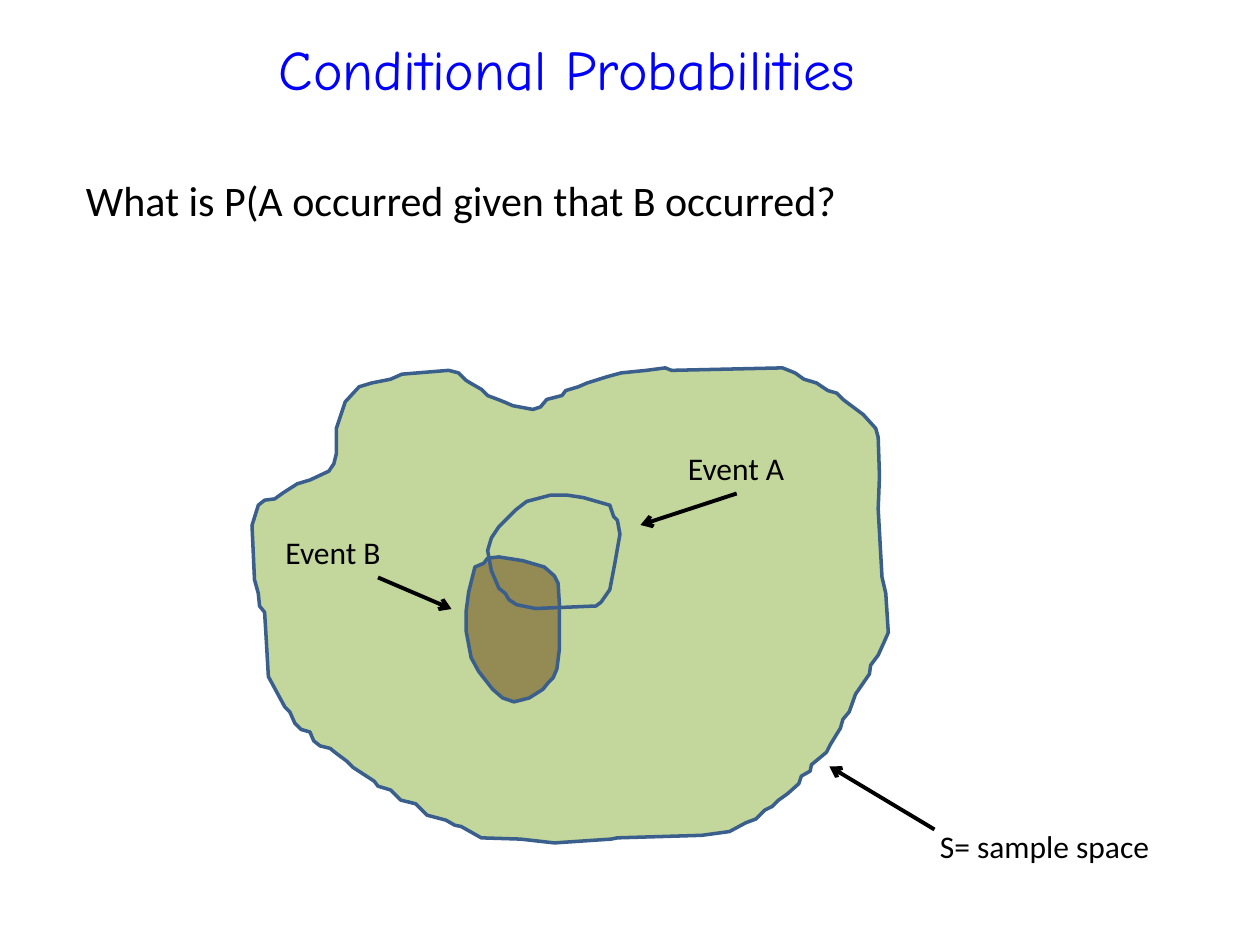
from lxml.etree import SubElement
from pptx import Presentation
from pptx.dml.color import RGBColor
from pptx.enum.shapes import MSO_CONNECTOR
from pptx.enum.text import MSO_ANCHOR, MSO_AUTO_SIZE, PP_ALIGN
from pptx.oxml.ns import qn
from pptx.util import Pt

HUNDREDTH_INCH = Pt(0.72)

SAMPLE_SPACE = [
    (423, 325), (407, 322), (400, 319), (395, 317), (387, 314), (382, 309),
    (375, 305), (370, 302), (364, 296), (356, 294), (319, 297), (310, 301),
    (295, 304), (285, 307), (274, 319), (267, 340), (267, 360), (265, 368),
    (261, 374), (246, 381), (236, 384), (225, 391), (218, 396), (210, 397),
    (205, 401), (200, 417), (202, 460), (205, 471), (206, 481), (210, 486),
    (211, 502), (213, 537), (226, 561), (230, 565), (234, 574), (239, 579),
    (246, 581), (249, 588), (254, 592), (262, 594), (267, 598), (275, 604),
    (280, 609), (297, 620), (300, 624), (310, 627), (318, 635), (330, 638),
    (339, 647), (354, 651), (361, 655), (366, 656), (382, 665), (413, 666),
    (440, 669), (485, 666), (490, 665), (557, 663), (579, 660), (592, 653),
    (600, 650), (607, 643), (613, 640), (618, 635), (625, 630), (634, 622),
    (636, 616), (643, 612), (644, 607), (656, 597), (659, 591), (667, 578),
    (669, 571), (674, 565), (679, 551), (690, 535), (691, 528), (697, 520),
    (702, 509), (705, 502), (703, 471), (700, 458), (697, 404), (698, 378),
    (697, 347), (695, 340), (685, 329), (669, 317), (664, 312), (657, 310),
    (648, 304), (638, 301), (631, 296), (621, 292), (533, 294), (528, 292),
    (513, 294), (493, 296), (482, 299), (466, 304), (459, 307), (449, 310),
    (446, 314), (434, 317), (429, 323),
]
EVENT_B = [
    (377, 450), (372, 470), (370, 485), (370, 501), (374, 522), (380, 533),
    (391, 547), (399, 554), (408, 557), (420, 554), (431, 547), (435, 542),
    (439, 538), (442, 531), (444, 515), (444, 480), (443, 463), (440, 457),
    (432, 450), (415, 445), (396, 442), (387, 443), (384, 447),
]
EVENT_A = [
    (484, 401), (463, 395), (450, 393), (437, 393), (418, 398), (409, 405),
    (396, 418), (390, 427), (387, 437), (390, 453), (396, 467), (401, 471),
    (404, 476), (410, 480), (425, 483), (473, 481), (477, 478), (484, 468),
    (488, 447), (492, 424), (490, 413), (487, 410),
]


def color(hex_value):
    return RGBColor.from_string(hex_value)


class VennSlide:
    body_font = "Calibri"
    title_font = "Comic Neue"
    ink = "000000"
    title_ink = "0000FF"
    outline_ink = "3A5F8C"

    def __init__(self, slide):
        self.slide = slide

    def format_text(self, frame, font_name, size, ink):
        for paragraph in frame.paragraphs:
            for run in paragraph.runs:
                run.font.name = font_name
                run.font.size = Pt(size)
                run.font.color.rgb = color(ink)

    def title(self, wording, left, top, width, height):
        heading = self.slide.shapes.title
        heading.left, heading.top = Pt(left), Pt(top)
        heading.width, heading.height = Pt(width), Pt(height)
        frame = heading.text_frame
        frame.text = wording
        frame.vertical_anchor = MSO_ANCHOR.MIDDLE
        frame.paragraphs[0].alignment = PP_ALIGN.CENTER
        self.format_text(frame, self.title_font, 32, self.title_ink)

    def label(self, wording, left, top, width, height=29, size=18):
        box = self.slide.shapes.add_textbox(Pt(left), Pt(top), Pt(width), Pt(height))
        frame = box.text_frame
        frame.text = wording
        frame.word_wrap = False
        frame.auto_size = MSO_AUTO_SIZE.SHAPE_TO_FIT_TEXT
        self.format_text(frame, self.body_font, size, self.ink)
        return box

    def region(self, outline, fill=None):
        first, *rest = outline
        builder = self.slide.shapes.build_freeform(*first, scale=HUNDREDTH_INCH)
        builder.add_line_segments(rest, close=True)
        area = builder.convert_to_shape()
        area.shadow.inherit = False
        if fill:
            area.fill.solid()
            area.fill.fore_color.rgb = color(fill)
        else:
            area.fill.background()
        area.line.color.rgb = color(self.outline_ink)
        area.line.width = Pt(2)

    def arrow(self, start, end, source=None):
        pointer = self.slide.shapes.add_connector(
            MSO_CONNECTOR.STRAIGHT, *map(Pt, start + end))
        if source is not None:
            pointer.begin_connect(source, 2)
        pointer.line.color.rgb = color(self.ink)
        pointer.line.width = Pt(2.25)
        SubElement(pointer.line._get_or_add_ln(), qn("a:tailEnd"), type="arrow")
        SubElement(pointer._element.spPr, qn("a:effectLst"))


def main():
    deck = Presentation()
    deck.slide_width, deck.slide_height = Pt(720), Pt(540)
    venn = VennSlide(deck.slides.add_slide(deck.slide_layouts[5]))

    venn.title("Conditional Probabilities", 0, -6, 648, 90)
    venn.region(SAMPLE_SPACE, "C3D69B")
    event_a = venn.label("Event A", 386, 253, 70)
    venn.arrow((420, 282), (366, 300), event_a)
    venn.label("S= sample space", 530, 469, 135)
    venn.arrow((534, 474), (474, 438))
    venn.region(EVENT_B, "948A54")
    venn.region(EVENT_A)
    venn.label("Event B", 156, 301, 70)
    venn.arrow((216, 330), (258, 348))
    venn.label("What is P(A occurred given that B occurred?", 42, 96, 447, 36, 24)

    deck.save("out.pptx")


if __name__ == "__main__":
    main()
